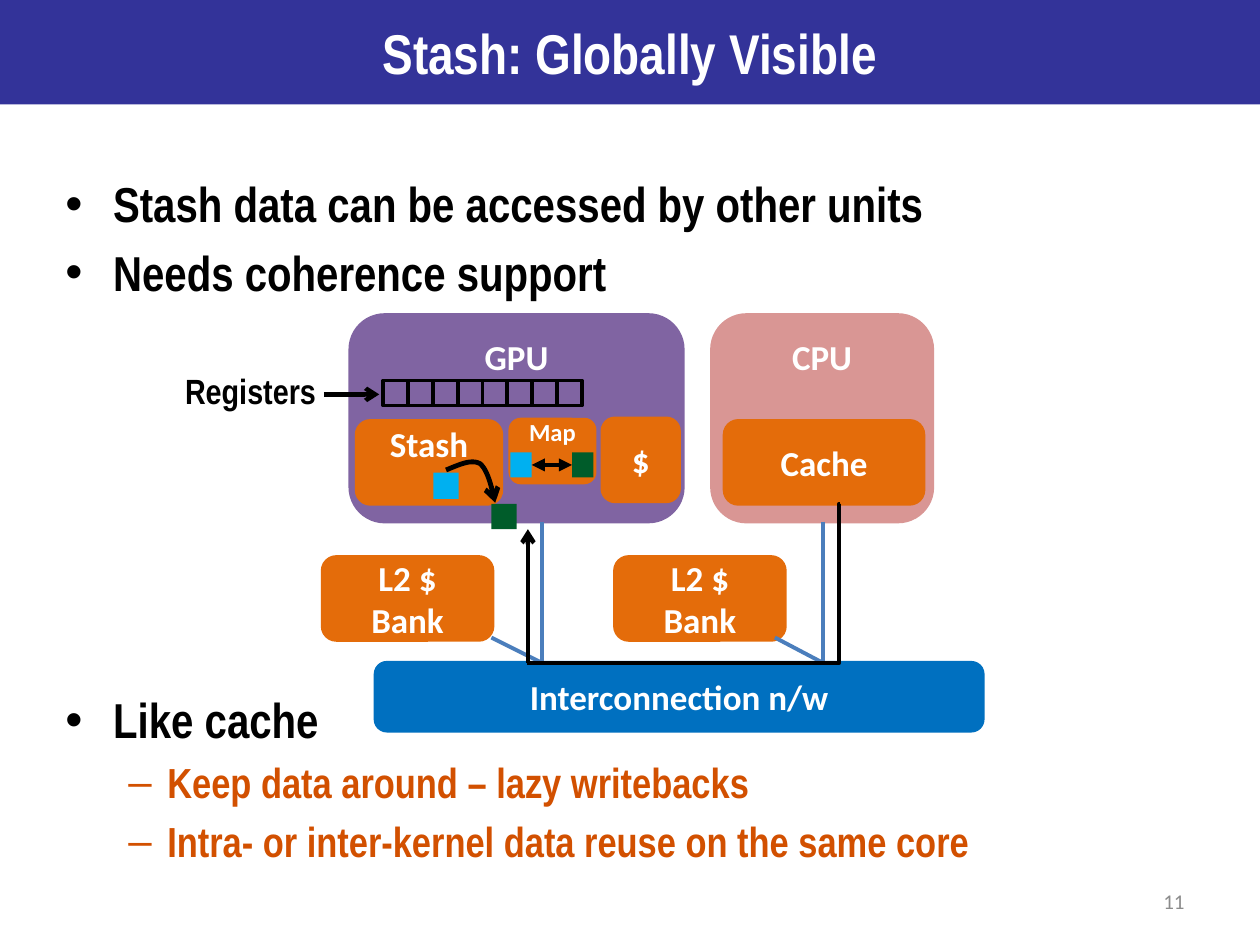
from pptx import Presentation
from pptx.dml.color import RGBColor
from pptx.enum.shapes import MSO_CONNECTOR as Link, MSO_SHAPE as Preset
from pptx.enum.text import MSO_ANCHOR as Anchor, PP_ALIGN as Align
from pptx.oxml.ns import qn
from pptx.util import Inches, Pt
from lxml.etree import SubElement

NAVY = RGBColor(0x33, 0x33, 0x99)
WHITE = RGBColor(0xFF, 0xFF, 0xFF)
BLACK = RGBColor(0, 0, 0)
GRAY = RGBColor(0x8C, 0x8C, 0x8C)
RUST = RGBColor(0xD2, 0x50, 0x00)
ORANGE = RGBColor(0xE4, 0x6C, 0x0A)
BLUE = RGBColor(0x00, 0x70, 0xC0)
PURPLE = RGBColor(0x80, 0x64, 0xA2)
PINK = RGBColor(0xD9, 0x96, 0x94)
STEEL = RGBColor(0x4B, 0x7E, 0xBC)
SKY = RGBColor(0x00, 0xB0, 0xF0)
GREEN = RGBColor(0x00, 0x5C, 0x2A)
NARROW, CALIBRI = "Arial Narrow", "Calibri"


def write(para, text, size=20, font=CALIBRI, color=WHITE, bold=True, align=Align.CENTER):
    para.alignment = align
    span = para.add_run()
    span.text = text.replace("\n", "\v")
    if "\n" in text:
        para.clear()
        for number, line in enumerate(text.split("\n")):
            if number:
                para.add_line_break()
            para.add_run().text = line
    for span in para.runs:
        span.font.size = Pt(size)
        span.font.name = font
        span.font.color.rgb = color
        span.font.bold = bold


def add_block(page, left, top, width, height, fill=None, line=None, preset=Preset.RECTANGLE,
              text="", lift=0, **style):
    """Add a filled or outlined shape; lift is the room kept free below its text."""
    box = page.shapes.add_shape(preset, Inches(left), Inches(top), Inches(width), Inches(height))
    box.shadow.inherit = False
    if fill is None:
        box.fill.background()
    else:
        box.fill.solid()
        box.fill.fore_color.rgb = fill
    if line is None:
        box.line.fill.background()
    else:
        box.line.color.rgb = line
        box.line.width = Pt(2)
    if text:
        frame = box.text_frame
        frame.word_wrap = True
        frame.vertical_anchor = Anchor.MIDDLE
        frame.margin_left = frame.margin_right = frame.margin_top = 0
        frame.margin_bottom = Inches(lift)
        write(frame.paragraphs[0], text, **style)
    return box


def add_unit(page, left, top, width, height, fill, text, **style):
    add_block(page, left, top, width, height, fill, fill, Preset.ROUNDED_RECTANGLE, text, **style)


def add_label(page, left, top, width, height, text, anchor=Anchor.TOP, **style):
    box = page.shapes.add_textbox(Inches(left), Inches(top), Inches(width), Inches(height))
    box.text_frame.word_wrap = True
    box.text_frame.vertical_anchor = anchor
    write(box.text_frame.paragraphs[0], text, **style)


def add_arrowheads(item, head=None, tail=None):
    outline = item.line._get_or_add_ln()
    for tag, kind in (("a:headEnd", head), ("a:tailEnd", tail)):
        if kind:
            SubElement(outline, qn(tag), type=kind)


def add_link(page, start, end, color=BLACK, width=2.5, kind=Link.STRAIGHT, head=None, tail=None):
    link = page.shapes.add_connector(kind, *map(Inches, start + end))
    link.line.color.rgb = color
    link.line.width = Pt(width)
    add_arrowheads(link, head, tail)
    SubElement(link._element.spPr, qn("a:effectLst"))
    return link


def add_curve(page, start, *pieces, steps=12):
    """Draw a curved arrow through cubic pieces, each two controls and an end."""
    points = []
    here = start
    for first, second, end in pieces:
        for step in range(1, steps + 1):
            t = step / steps
            weights = (1 - t) ** 3, 3 * t * (1 - t) ** 2, 3 * t * t * (1 - t), t ** 3
            corners = list(zip(here, first, second, end))
            points.append([sum(w * c for w, c in zip(weights, axis)) for axis in corners])
        here = end
    builder = page.shapes.build_freeform(*map(Inches, start))
    builder.add_line_segments([(Inches(x), Inches(y)) for x, y in points], close=False)
    curve = builder.convert_to_shape()
    curve.shadow.inherit = False
    curve.fill.background()
    curve.line.color.rgb = BLACK
    curve.line.width = Pt(2.75)
    add_arrowheads(curve, tail="arrow")


def add_bullets(page, items):
    box = page.shapes.add_textbox(Inches(0.42), Inches(1.33), Inches(9.17), Inches(5.67))
    frame = box.text_frame
    frame.word_wrap = True
    for number, (text, level, gap) in enumerate(items):
        para = frame.add_paragraph() if number else frame.paragraphs[0]
        size, color, mark, left, hang = ((28, BLACK, "•", 0.38, 0.38),
                                         (24, RUST, "–", 0.81, 0.31))[level]
        write(para, text, size=size, font=NARROW, color=color, align=Align.LEFT)
        para.level = level
        para.space_before = Pt(gap)
        props = para._p.get_or_add_pPr()
        props.set("marL", str(Inches(left)))
        props.set("indent", str(-Inches(hang)))
        SubElement(props, qn("a:buFont"), typeface="Arial")
        SubElement(props, qn("a:buChar"), char=mark)


def add_diagram(page):
    for left in (2.56, 4.88):
        add_unit(page, left, 4.42, 1.35, 0.66, ORANGE, "L2 $\nBank")
    add_unit(page, 2.98, 5.26, 4.82, 0.54, BLUE, "Interconnection n/w")
    add_unit(page, 2.78, 2.5, 2.64, 1.64, PURPLE, "GPU", lift=0.98)
    add_unit(page, 5.65, 2.5, 1.75, 1.64, PINK, "CPU", lift=0.98)
    for bank_x, unit_x in ((3.9, 4.3), (6.15, 6.53)):
        add_link(page, (unit_x, 4.14), (unit_x, 5.26), STEEL, 2.25)
        add_link(page, (bank_x, 5.06), (unit_x, 5.26), STEEL, 2.25)
    add_unit(page, 2.83, 3.34, 1.15, 0.66, ORANGE, "Stash", lift=0.3)
    add_unit(page, 5.75, 3.34, 1.58, 0.66, ORANGE, "Cache")

    add_label(page, 1.37, 2.88, 1.25, 0.44, "Registers", font=NARROW, color=BLACK,
              align=Align.LEFT)
    registers = 8
    first, last = 3.04, 4.42
    for number in range(registers):
        left = first + number * (last - first) / (registers - 1)
        add_block(page, left, 3.02, 0.2, 0.2, line=BLACK)
    add_link(page, (2.57, 3.13), (3.01, 3.13), tail="arrow")

    add_unit(page, 4.05, 3.33, 0.67, 0.5, ORANGE, "Map", lift=0.3, size=14)
    add_block(page, 4.05, 3.59, 0.17, 0.2, SKY)
    add_block(page, 4.54, 3.59, 0.17, 0.2, GREEN)
    add_link(page, (4.54, 3.69), (4.22, 3.69), head="triangle", tail="triangle")
    add_block(page, 3.44, 3.75, 0.2, 0.21, SKY)
    add_block(page, 3.9, 4, 0.2, 0.2, GREEN)
    add_curve(page, (3.54, 3.73),
              ((3.64, 3.69), (3.74, 3.64), (3.81, 3.68)),
              ((3.87, 3.73), (3.9, 3.86), (3.93, 3.99)))
    add_unit(page, 4.78, 3.32, 0.61, 0.66, ORANGE, "$")

    route = add_link(page, (6.67, 4), (4.18, 5.26), kind=Link.ELBOW)
    guides = route._element.spPr.find(qn("a:prstGeom")).get_or_add_avLst()
    SubElement(guides, qn("a:gd"), name="adj1", fmla="val 400")
    add_link(page, (4.19, 5.26), (4.19, 4.2), tail="arrow")


def main():
    deck = Presentation()
    deck.slide_width, deck.slide_height = Inches(10), Inches(7.5)
    page = deck.slides.add_slide(deck.slide_layouts[6])
    add_block(page, 0, 0, 10, 0.83, NAVY, text="Stash: Globally Visible", size=32, font=NARROW)
    add_bullets(page, [
        ("Stash data can be accessed by other units", 0, 5.6),
        ("Needs coherence support", 0, 5.6),
        ("Like cache", 0, 222),
        ("Keep data around – lazy writebacks", 1, 4.8),
        ("Intra- or inter-kernel data reuse on the same core", 1, 4.8),
    ])
    add_label(page, 7.17, 6.95, 2.33, 0.4, "11", anchor=Anchor.MIDDLE, size=12, color=GRAY,
              bold=False, align=Align.RIGHT)
    add_diagram(page)
    deck.save("out.pptx")


if __name__ == "__main__":
    main()
